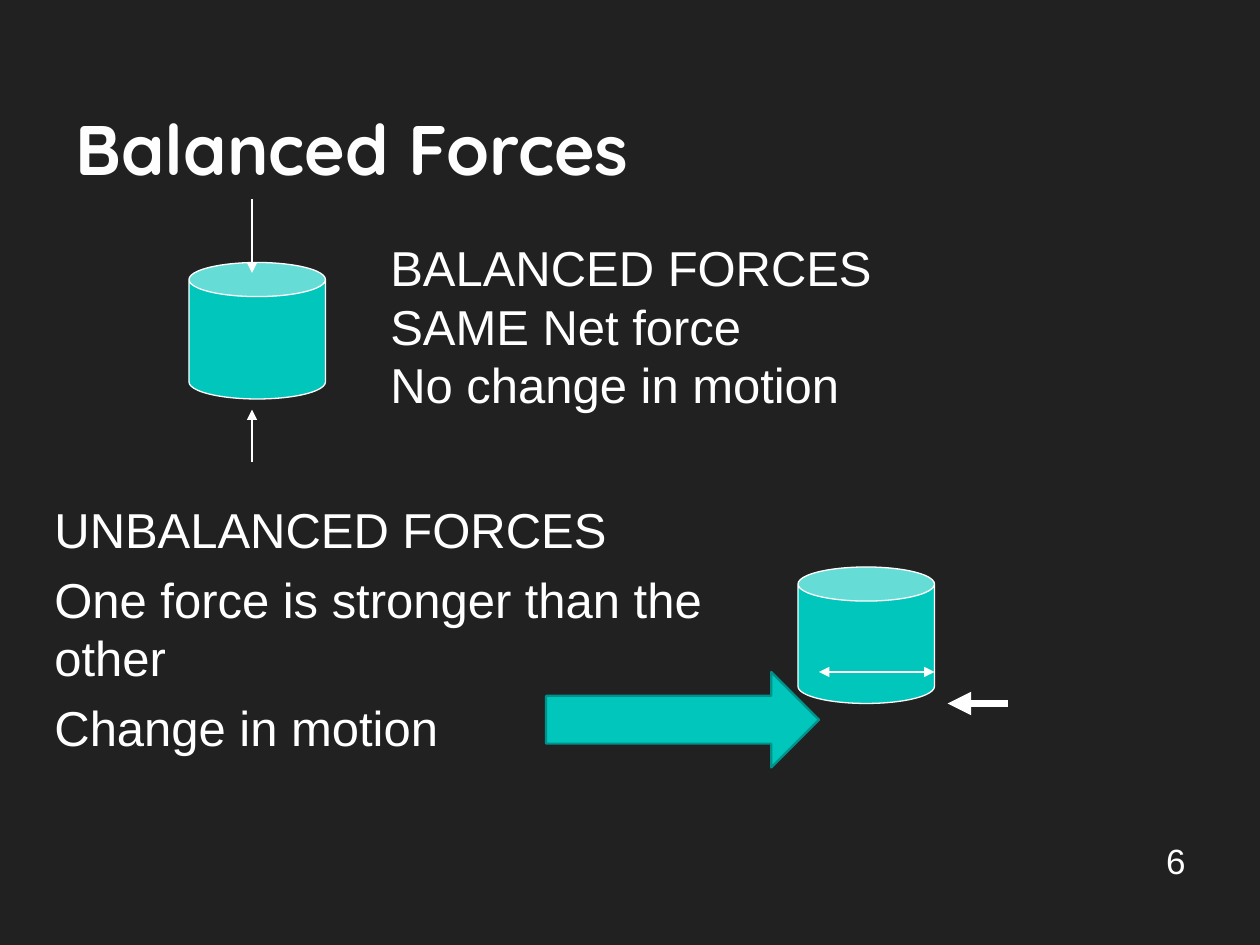
import pptx
import pptx.util
import pptx.dml.color
import pptx.enum.shapes
import pptx.enum.text
import pptx.oxml
import pptx.oxml.ns

C = {"bg": "212121", "title": "FEFEFE", "white": "FFFFFF", "teal": "00C6BB", "edge": "00928A"}
RGB = pptx.dml.color.RGBColor.from_string
Pt = pptx.util.Pt
MSO = pptx.enum.shapes.MSO_SHAPE
ANCHOR = pptx.enum.text.MSO_ANCHOR
ALIGN = pptx.enum.text.PP_ALIGN
NS = pptx.oxml.ns.nsdecls("a")

prs = pptx.Presentation()
prs.slide_width, prs.slide_height = pptx.util.Inches(10), pptx.util.Inches(7.5)
col, row = prs.slide_width / 120, prs.slide_height / 90
s = prs.slides.add_slide(prs.slide_layouts[6])
s.background.fill.solid()
s.background.fill.fore_color.rgb = RGB(C["bg"])


def grid(x, y, w, h):
    return [round(v) for v in (x * col, y * row, w * col, h * row)]


def add_text(box, lines, font, color, frame={}, para={}):
    tf = s.shapes.add_textbox(*grid(*box)).text_frame
    for k, v in {"word_wrap": True, **frame}.items():
        setattr(tf, k, v)
    for i, line in enumerate(lines):
        p = tf.paragraphs[0] if i == 0 else tf.add_paragraph()
        for k, v in para.items():
            setattr(p, k, v)
        r = p.add_run()
        r.text = line
        for k, v in font.items():
            setattr(r.font, k, v)
        r.font.color.rgb = RGB(C[color])
    return tf


tf = add_text((6, 3.6, 108, 15), ["Balanced Forces"],
              {"size": Pt(40), "name": "Quicksand", "bold": True}, "title",
              {"vertical_anchor": ANCHOR.BOTTOM})
shadow = pptx.oxml.parse_xml(
    f'<a:effectLst {NS}><a:outerShdw blurRad="50800" dist="38100" dir="2700000">'
    '<a:srgbClr val="000000"><a:alpha val="43000"/></a:srgbClr></a:outerShdw></a:effectLst>')
tf.paragraphs[0].runs[0].font.fill._xPr.find(pptx.oxml.ns.qn("a:solidFill")).addnext(shadow)

add_text((103.7, 77.6, 10.4, 6.5), ["6"], {"size": Pt(20), "name": "Arial"}, "white",
         {"vertical_anchor": ANCHOR.BOTTOM, "margin_bottom": Pt(0.7)}, {"alignment": ALIGN.RIGHT})

body = {"size": Pt(28), "name": "Arial"}
add_text((36, 22, 78, 18), ["BALANCED FORCES", "SAME Net force", "No change in motion"], body, "white")
add_text((4, 47, 70, 26),
         ["UNBALANCED FORCES", "One force is stronger than the other", "Change in motion"],
         body, "white", para={"space_before": Pt(6)})

for kind, box, edge, width in [
    (MSO.CAN, (18, 25, 13, 13), "white", 0.75),
    (MSO.CAN, (76, 54, 13, 13), "white", 0.75),
    (MSO.RIGHT_ARROW, (52, 64, 26, 9.1), "edge", 1.25),
]:
    sp = s.shapes.add_shape(kind, *grid(*box))
    sp.shadow.inherit = False
    sp.fill.solid()
    sp.fill.fore_color.rgb = RGB(C["teal"])
    sp.line.color.rgb = RGB(C[edge])
    sp.line.width = Pt(width)

for ends, width, heads in [
    ((96, 67, 90.25, 67), 4.5, ["tailEnd"]),
    ((24, 19, 24, 26), 0.75, ["tailEnd"]),
    ((78, 64, 89, 64), 0.75, ["headEnd", "tailEnd"]),
    ((24, 44, 24, 39), 0.75, ["tailEnd"]),
]:
    ln = s.shapes.add_connector(pptx.enum.shapes.MSO_CONNECTOR.STRAIGHT, *grid(*ends))
    ln.line.color.rgb = RGB(C["white"])
    ln.line.width = Pt(width)
    for head in heads:
        ln.line._get_or_add_ln().append(pptx.oxml.parse_xml(f'<a:{head} {NS} type="triangle"/>'))
    ln._element.spPr.append(pptx.oxml.parse_xml(f"<a:effectLst {NS}/>"))

prs.save("out.pptx")
